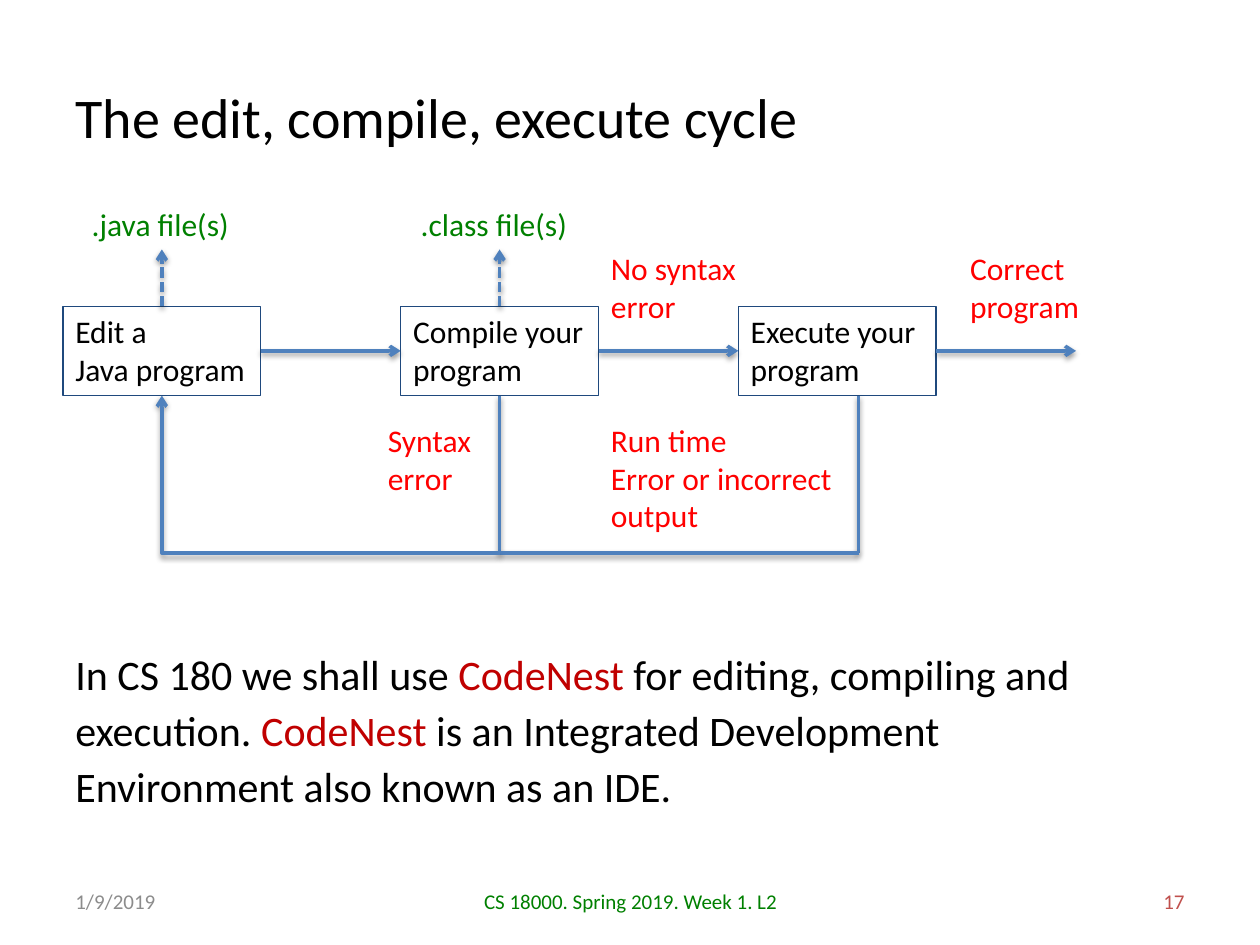
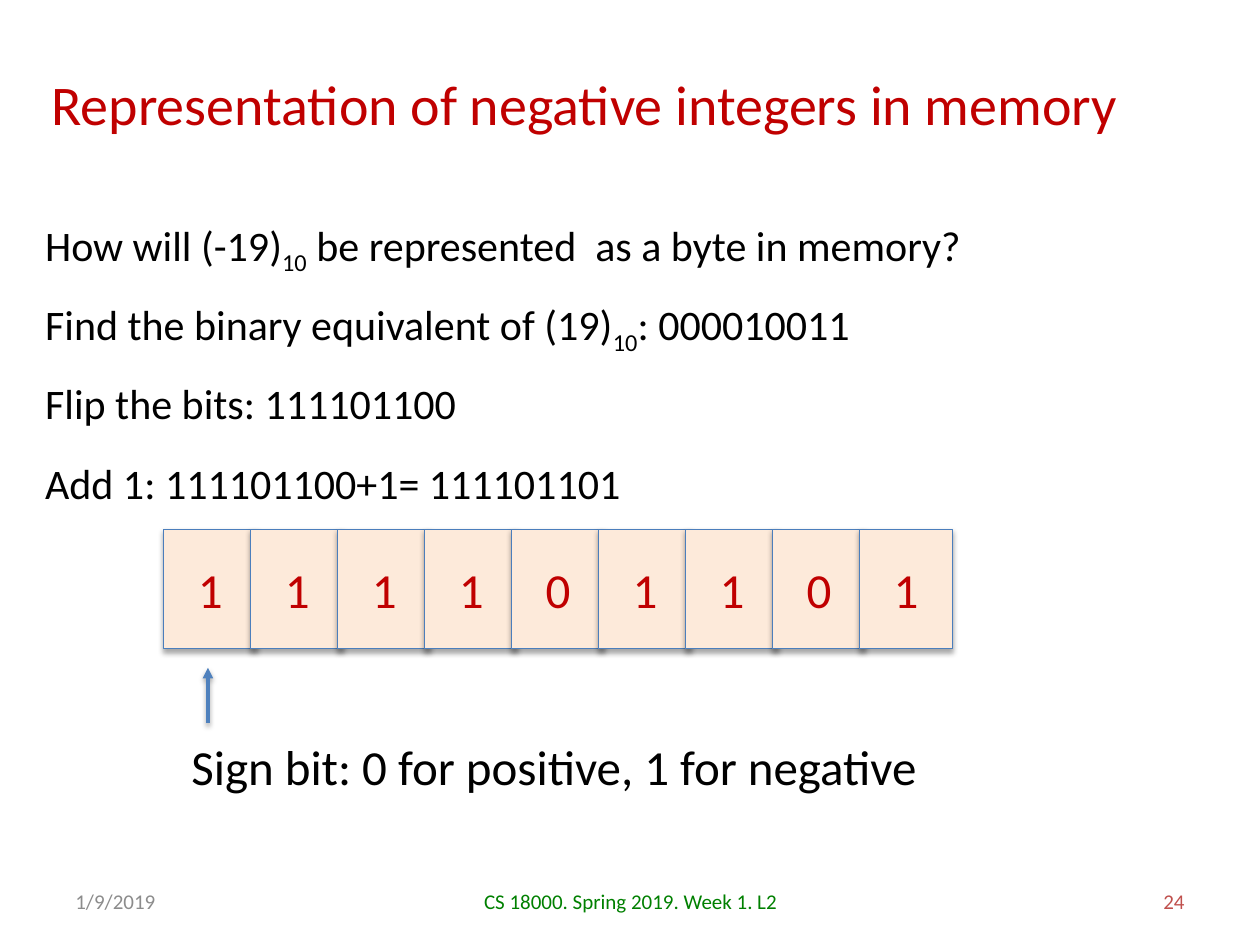
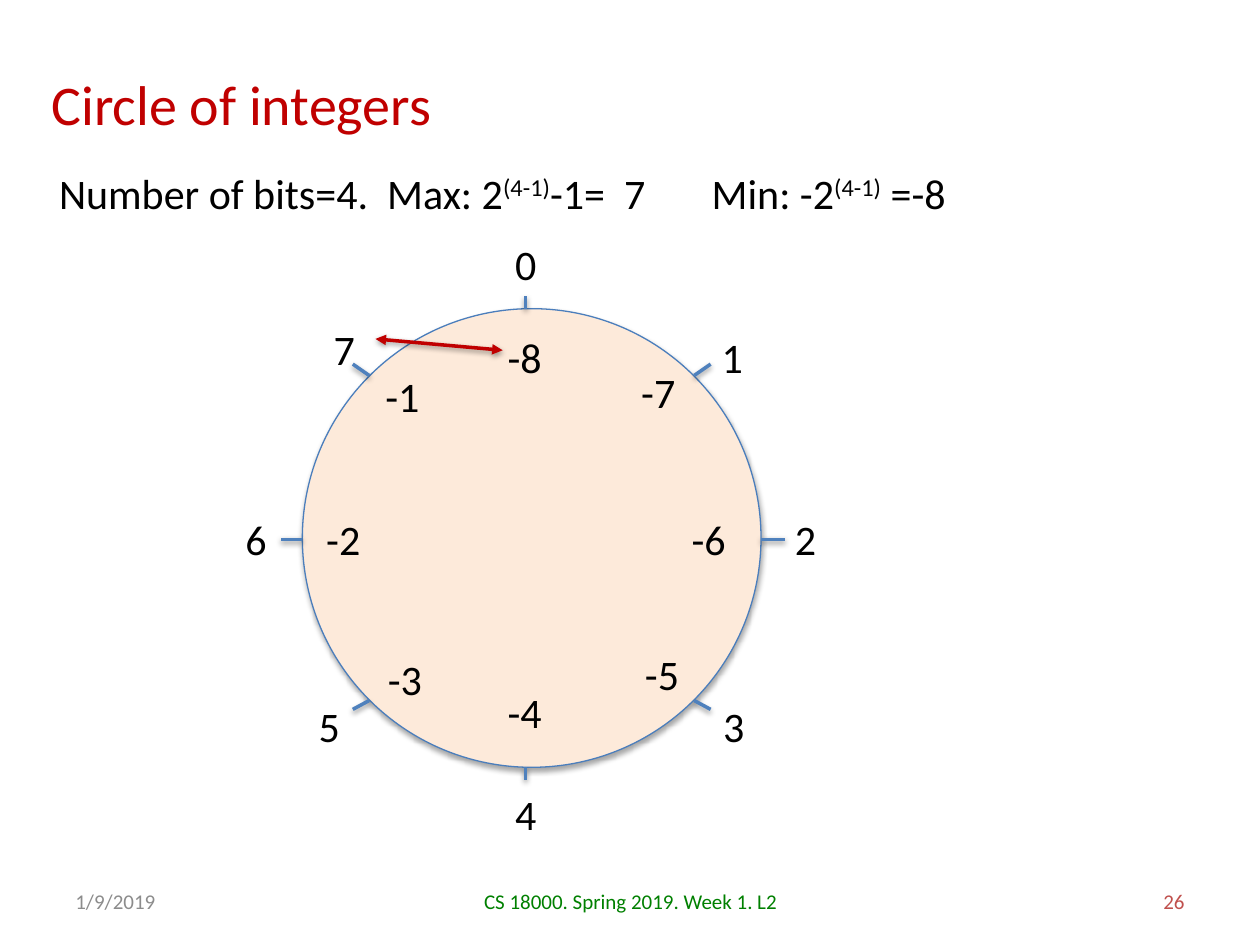
from dataclasses import dataclass

from pptx import Presentation
from pptx.dml.color import RGBColor
from pptx.enum.dml import MSO_LINE
from pptx.enum.shapes import MSO_CONNECTOR as Link, MSO_SHAPE as Preset
from pptx.enum.text import MSO_ANCHOR as Anchor, MSO_AUTO_SIZE as Fit, PP_ALIGN as Align
from pptx.oxml.ns import qn
from pptx.util import Inches, Pt
from lxml.etree import SubElement


@dataclass(frozen=True)
class Theme:
    font: str = "Calibri"
    black: str = "000000"
    dark_red: str = "C00000"
    red: str = "FF0000"
    green: str = "008000"
    gray: str = "8C8C8C"
    number: str = "C0504D"
    blue: str = "4F81BD"
    outline: str = "4B7EBC"
    navy: str = "1F497D"
    peach: str = "FDEADA"
    title: int = 32
    large: int = 28
    body: int = 24
    label: int = 18
    footer: int = 12
    thin: float = 0.75
    thick: float = 2


THEME = Theme()

# Shared by all slides
DATE = "1/9/2019"
COURSE = "CS 18000. Spring 2019. Week 1. L2"
TITLE_AREA = (0.31, 0.4, 9.02, 0.84)

# The edit, compile, execute cycle
STEPS = [
    ["Edit a", "Java program"],
    ["Compile your", "program"],
    ["Execute your", "program"],
]
STEP_LEFT, STEP_TOP, STEP_WIDTH, STEP_HEIGHT, STEP_PITCH = 0.5, 2.43, 1.57, 0.71, 2.68
LOOP_LEVEL = 4.39
FILES = [
    (".java file(s)", (0.63, 1.58, 1.3, 0.4)),
    (".class file(s)", (3.24, 1.58, 1.37, 0.4)),
]
OUTCOMES = [
    (["Syntax", "error"], (2.98, 3.29, 0.88, 0.71)),
    (["Run time", "Error or incorrect", "output"], (4.75, 3.29, 1.97, 1.01)),
    (["No syntax", "error"], (4.75, 1.93, 1.21, 0.71)),
    (["Correct", "program"], (7.6, 1.93, 1.08, 0.71)),
]
TOOL = ("CodeNest", {"color": THEME.dark_red})
IDE_NOTE = [
    "In CS 180 we shall use ", TOOL, " for editing, compiling and execution. ", TOOL,
    " is an Integrated Development Environment also known as an IDE.",
]

# Representation of negative integers
BASE_TEN = ("10", {"baseline": -25})
CONVERSION = [
    (["How will (-19)", BASE_TEN, " be represented  as a byte in memory?"], 7.68),
    (["Find the binary equivalent of (19)", BASE_TEN, ": 000010011"], 6.79),
    (["Flip the bits: 111101100"], 3.49),
    (["Add 1: 111101100+1= 111101101"], 4.8),
]
CONVERSION_TOP, CONVERSION_PITCH = 1.69, 0.63
BITS = "111101101"
BIT_LEFT, BIT_PITCH = 1.3, 0.69

# Circle of integers
POWER = ("(4-1)", {"baseline": 30})
RANGE = ["Number of bits=4.  Max: 2", POWER, "-1=  7\tMin: -2", POWER, " =-8"]
# Corner of the outer label, corner of the inner label, tick start, tick end
SPOKES = [
    ((3.99, 1.84), (3.93, 2.58), (4.17, 2.35), (4.17, 2.45)),
    ((5.63, 2.58), (4.99, 2.86), (5.51, 2.98), (5.64, 2.89)),
    ((6.21, 4.03), (5.39, 4.03), (6.04, 4.28), (6.23, 4.28)),
    ((5.64, 5.51), (5.02, 5.1), (5.51, 5.56), (5.64, 5.63)),
    ((3.99, 6.21), (3.93, 5.4), (4.17, 6.09), (4.17, 6.19)),
    ((2.43, 5.51), (2.98, 5.14), (2.93, 5.56), (2.8, 5.63)),
    ((1.85, 4.03), (2.49, 4.03), (2.4, 4.28), (2.23, 4.28)),
    ((2.55, 2.52), (2.96, 2.89), (2.93, 2.98), (2.8, 2.89)),
]


def rgb(color):
    return RGBColor.from_string(color)


def write(box, paragraphs, size=THEME.body, color=THEME.black, align=Align.LEFT,
          anchor=Anchor.TOP, wrap=False, spacing=None, tab=None):
    """Fill a box; a paragraph is a string or a list of strings and (text, format) spans."""
    frame = box.text_frame
    frame.word_wrap = wrap
    frame.auto_size = Fit.NONE if wrap else Fit.SHAPE_TO_FIT_TEXT
    frame.vertical_anchor = anchor
    for index, spans in enumerate(paragraphs):
        para = frame.add_paragraph() if index else frame.paragraphs[0]
        para.alignment = align
        if spacing:
            para.line_spacing = Pt(spacing)
        if tab:
            stops = SubElement(para._p.get_or_add_pPr(), qn("a:tabLst"))
            SubElement(stops, qn("a:tab"), pos=str(Inches(tab)), algn="l")
        for span in [spans] if isinstance(spans, str) else spans:
            text, style = (span, {}) if isinstance(span, str) else span
            run = para.add_run()
            run.text = text
            run.font.name = THEME.font
            run.font.size = Pt(size)
            run.font.color.rgb = rgb(style.get("color", color))
            if "baseline" in style:
                run.font._element.set("baseline", str(style["baseline"] * 1000))


def add_text(page, area, paragraphs, **style):
    write(page.shapes.add_textbox(*map(Inches, area)), paragraphs, **style)


def add_shadow(effects, distance, alpha):
    shadow = SubElement(effects, qn("a:outerShdw"), blurRad=str(Pt(3.1)),
                        dist=str(Pt(distance)), dir="5400000", rotWithShape="0")
    tone = SubElement(shadow, qn("a:srgbClr"), val=THEME.black)
    SubElement(tone, qn("a:alpha"), val=str(alpha * 1000))


def add_box(page, preset, area, line, fill=None):
    """Add an outlined shape; a filled one also casts a shadow."""
    box = page.shapes.add_shape(preset, *map(Inches, area))
    box.shadow.inherit = False
    box.line.color.rgb = rgb(line)
    box.line.width = Pt(THEME.thin)
    if fill:
        box.fill.solid()
        box.fill.fore_color.rgb = rgb(fill)
        add_shadow(box._element.spPr.find(qn("a:effectLst")), 1.8, 35)
    else:
        box.fill.background()
    return box


def add_line(page, start, end, color=THEME.blue, head=None, tail=None,
             dashed=False, corner=False):
    kind = Link.ELBOW if corner else Link.STRAIGHT
    link = page.shapes.add_connector(kind, *map(Inches, (*start, *end)))
    properties = link._element.spPr
    if corner:
        properties.find(qn("a:prstGeom")).set("prst", "bentConnector2")
    link.line.color.rgb = rgb(color)
    link.line.width = Pt(THEME.thick)
    if dashed:
        link.line.dash_style = MSO_LINE.SQUARE_DOT
    for tag, arrow in (("a:headEnd", head), ("a:tailEnd", tail)):
        if arrow:
            SubElement(properties.find(qn("a:ln")), qn(tag), type=arrow)
    add_shadow(SubElement(properties, qn("a:effectLst")), 1.6, 38)


def add_page(deck, title, number, area=TITLE_AREA, color=THEME.dark_red):
    """Add a slide with its title and footer."""
    page = deck.slides.add_slide(deck.slide_layouts[6])
    add_text(page, area, [title], size=THEME.title, color=color,
             anchor=Anchor.MIDDLE, wrap=True)
    for text, left, width, tone, align in (
        (DATE, 0.5, 2.33, THEME.gray, Align.LEFT),
        (COURSE, 3.42, 3.17, THEME.green, Align.CENTER),
        (str(number), 7.17, 2.33, THEME.number, Align.RIGHT),
    ):
        add_text(page, (left, 6.95, width, 0.4), [text], size=THEME.footer,
                 color=tone, align=align, anchor=Anchor.MIDDLE, wrap=True)
    return page


def build_cycle(deck):
    page = add_page(deck, "The edit, compile, execute cycle", 17,
                    area=(0.5, 0.3, 9, 1.25), color=THEME.black)
    bottom = STEP_TOP + STEP_HEIGHT
    middle = STEP_TOP + STEP_HEIGHT / 2
    lefts = [STEP_LEFT + index * STEP_PITCH for index in range(len(STEPS))]
    for left, words in zip(lefts, STEPS):
        box = add_box(page, Preset.RECTANGLE, (left, STEP_TOP, STEP_WIDTH, STEP_HEIGHT),
                      THEME.navy)
        write(box, words, size=THEME.label)
        add_line(page, (left + STEP_WIDTH, middle), (left + STEP_PITCH, middle),
                 tail="arrow")

    edit, compiling, execute = [left + STEP_WIDTH / 2 for left in lefts]
    execute += 0.17
    for center in (compiling, execute):
        add_line(page, (center, bottom), (center, LOOP_LEVEL))
    add_line(page, (execute, LOOP_LEVEL), (compiling, LOOP_LEVEL))
    add_line(page, (compiling, LOOP_LEVEL), (edit, bottom), tail="arrow", corner=True)

    for center, (name, area) in zip((edit, compiling), FILES):
        add_text(page, area, [name], size=THEME.label, color=THEME.green)
        add_line(page, (center, STEP_TOP), (center, 1.98), tail="arrow", dashed=True)
    for words, area in OUTCOMES:
        add_text(page, area, words, size=THEME.label, color=THEME.red)
    add_text(page, (0.5, 5.05, 8.74, 1.42), [IDE_NOTE], wrap=True, spacing=32)


def build_negatives(deck):
    page = add_page(deck, "Representation of negative integers in memory", 24)
    for index, (spans, width) in enumerate(CONVERSION):
        top = CONVERSION_TOP + index * CONVERSION_PITCH
        add_text(page, (0.26, top, width, 0.5), [spans])
    for index, bit in enumerate(BITS):
        cell = add_box(page, Preset.RECTANGLE,
                       (BIT_LEFT + index * BIT_PITCH, 4.2, 0.74, 0.95),
                       THEME.outline, THEME.peach)
        write(cell, [bit], size=THEME.large, color=THEME.dark_red,
              align=Align.CENTER, anchor=Anchor.MIDDLE, wrap=True)
    add_line(page, (1.65, 5.74), (1.65, 5.3), tail="triangle")
    add_text(page, (1.42, 5.8, 6.03, 0.57),
             ["Sign bit: 0 for positive, 1 for negative"], size=THEME.large)


def build_circle(deck):
    page = add_page(deck, "Circle of integers", 26)
    add_box(page, Preset.OVAL, (2.4, 2.45, 3.64, 3.64), THEME.outline, THEME.peach)
    add_text(page, (0.37, 1.28, 7.41, 0.5), [RANGE], tab=5.18)
    for value, (outer, inner, start, end) in enumerate(SPOKES):
        add_line(page, start, end)
        add_text(page, (*outer, 0.37, 0.5), [str(value)])
        add_text(page, (*inner, 0.48, 0.5), [str(value - len(SPOKES))])
    add_line(page, (2.98, 2.69), (3.99, 2.78), color=THEME.dark_red,
             head="triangle", tail="triangle")


def main():
    deck = Presentation()
    deck.slide_width, deck.slide_height = Inches(10), Inches(7.5)
    build_cycle(deck)
    build_negatives(deck)
    build_circle(deck)
    deck.save("out.pptx")


if __name__ == "__main__":
    main()
